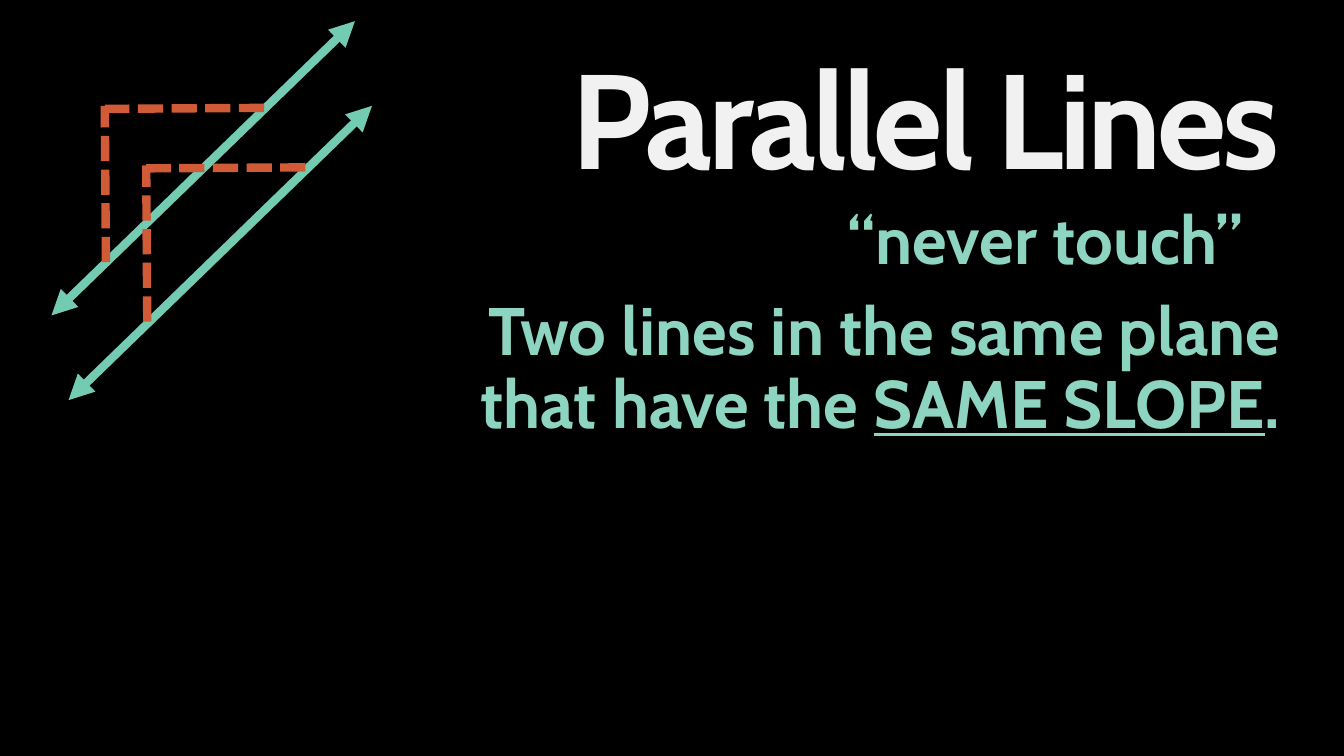
from lxml import etree
from pptx import Presentation
from pptx.dml.color import RGBColor
from pptx.enum.dml import MSO_LINE
from pptx.enum.shapes import MSO_CONNECTOR
from pptx.enum.text import MSO_ANCHOR, PP_ALIGN
from pptx.oxml.ns import qn
from pptx.util import Inches, Pt

STRAIGHT = MSO_CONNECTOR.STRAIGHT
SHORT_DASH = MSO_LINE.SQUARE_DOT
TOP, BOTTOM = MSO_ANCHOR.TOP, MSO_ANCHOR.BOTTOM
RIGHT = PP_ALIGN.RIGHT

BLACK = RGBColor(0x00, 0x00, 0x00)
OFF_WHITE = RGBColor(0xF1, 0xF1, 0xF1)
MINT = RGBColor(0x8E, 0xD5, 0xC1)
LINE_GREEN = RGBColor(0x73, 0xCB, 0xB2)
SLOPE_ORANGE = RGBColor(0xD1, 0x5B, 0x37)

FONT_NAME = "Cabin"
SLIDE_WIDTH, SLIDE_HEIGHT = Inches(13.33), Inches(7.5)
COLUMN, ROW = SLIDE_WIDTH / 100, SLIDE_HEIGHT / 100


def place(column, row):
    return round(column * COLUMN), round(row * ROW)


def add_text(slide, position, size, runs, points, color, anchor=BOTTOM, wrap=True):
    box = slide.shapes.add_textbox(*place(*position), *place(*size))
    frame = box.text_frame
    frame.word_wrap = wrap
    frame.vertical_anchor = anchor
    paragraph = frame.paragraphs[0]
    paragraph.alignment = RIGHT
    paragraph.line_spacing = 0.9
    paragraph.font.name = FONT_NAME
    paragraph.font.size = Pt(points)
    paragraph.font.bold = True
    paragraph.font.color.rgb = color
    for text, underlined in runs:
        run = paragraph.add_run()
        run.text = text
        if underlined:
            run.font.underline = True
    return paragraph


def tighten(paragraph, points):
    for run in paragraph.runs:
        run._r.get_or_add_rPr().set("spc", str(-points * 100))


def add_line(slide, start, end, color):
    connector = slide.shapes.add_connector(STRAIGHT, *place(*start), *place(*end))
    connector.line.color.rgb = color
    connector.line.width = Pt(6)
    etree.SubElement(connector._element.spPr, qn("a:effectLst"))
    return connector


def add_double_arrow(slide, start, end):
    connector = add_line(slide, start, end, LINE_GREEN)
    outline = connector._element.spPr.find(qn("a:ln"))
    for tag in ("a:headEnd", "a:tailEnd"):
        etree.SubElement(outline, qn(tag), type="triangle")


def add_slope_triangle(slide, left, top):
    rise = (left + 0.08, top + 20.67), (left, top)
    run = (left + 11.85, top + 0.27), (left, top + 0.4)
    for start, end in (rise, run):
        add_line(slide, start, end, SLOPE_ORANGE).line.dash_style = SHORT_DASH


def main():
    presentation = Presentation()
    presentation.slide_width = SLIDE_WIDTH
    presentation.slide_height = SLIDE_HEIGHT
    slide = presentation.slides.add_slide(presentation.slide_layouts[6])
    slide.background.fill.solid()
    slide.background.fill.fore_color.rgb = BLACK

    title = add_text(slide, (40.1, 6.4), (55.8, 21.5), [("Parallel Lines", False)],
                     96, OFF_WHITE, TOP, wrap=False)
    tighten(title, 3)
    add_text(slide, (57.3, 26.7), (35.9, 10.9), [("“never touch”", False)], 48, MINT)
    definition = [
        ("Two lines in the same plane that have the ", False),
        ("SAME SLOPE", True),
        (".", False),
    ]
    add_text(slide, (32.4, 33.5), (63.6, 25.7), definition, 48, MINT)

    for left, bottom in ((3.83, 41.73), (5.1, 52.93)):
        add_double_arrow(slide, (left, bottom), (left + 22.58, bottom - 38.93))
    for left, top in ((7.8, 14), (10.88, 21.87)):
        add_slope_triangle(slide, left, top)

    presentation.save("out.pptx")


if __name__ == "__main__":
    main()
